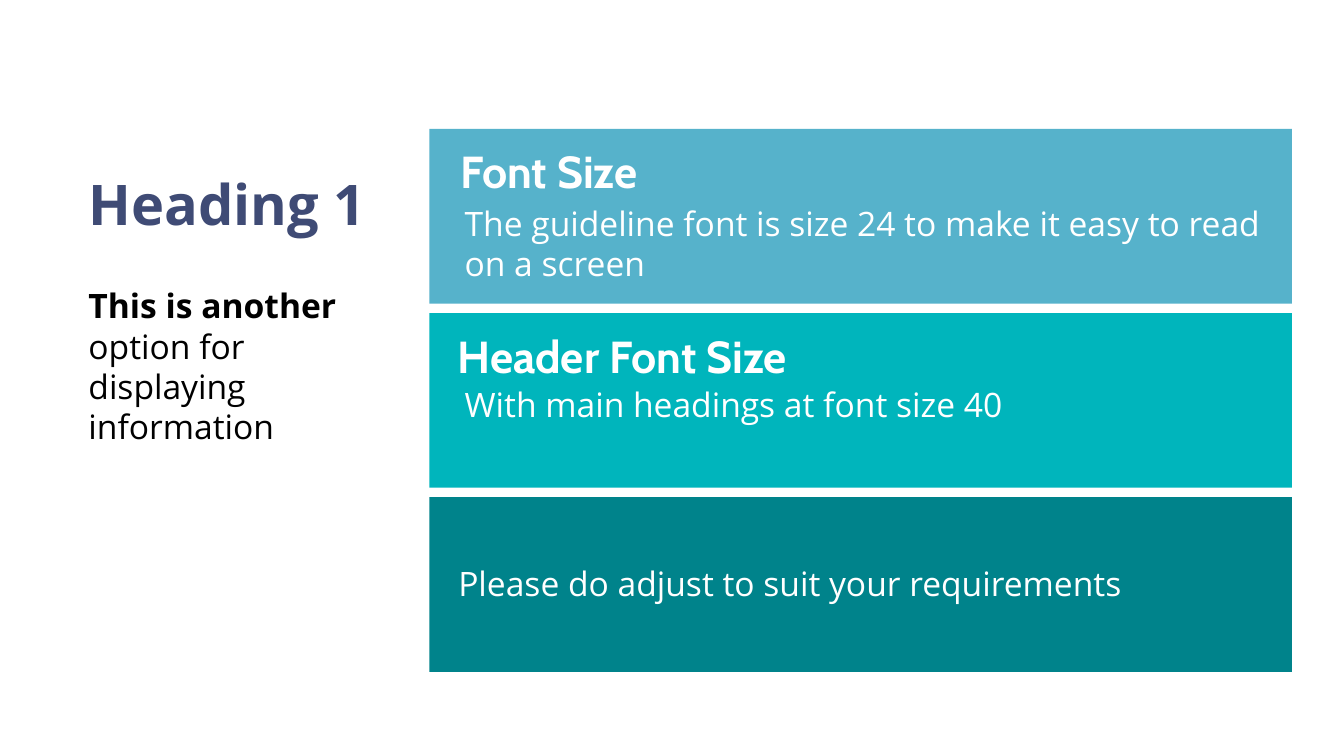
from pptx import Presentation
from pptx.dml.color import RGBColor as RGB
from pptx.enum.shapes import MSO_SHAPE as SHAPE
from pptx.enum.text import MSO_AUTO_SIZE as FIT
from pptx.util import Cm, Pt

COLORS = {
    "sky": "56B2CB",
    "turquoise": "00B5BC",
    "teal": "00838B",
    "navy": "3F4B75",
    "black": "000000",
    "white": "FFFFFF",
}


class Deck:
    formats = {
        "heading": {"name": "Open Sans", "size": Pt(40), "bold": True},
        "title": {"name": "Cabin", "size": Pt(32), "bold": True},
        "body": {"name": "Open Sans", "size": Pt(24), "bold": False},
        "strong": {"name": "Open Sans", "size": Pt(24), "bold": True},
    }

    def __init__(self):
        self.prs = Presentation()
        self.prs.slide_width = Cm(33.87)
        self.prs.slide_height = Cm(19.05)
        self.s = self.prs.slides.add_slide(self.prs.slide_layouts[6])

    def panel(self, x, y, w, h, color):
        sp = self.s.shapes.add_shape(SHAPE.RECTANGLE, Cm(x), Cm(y), Cm(w), Cm(h))
        sp.shadow.inherit = False
        sp.fill.solid()
        sp.fill.fore_color.rgb = RGB.from_string(COLORS[color])
        sp.line.fill.background()

    def text(self, x, y, w, h, color, *runs):
        sp = self.s.shapes.add_textbox(Cm(x), Cm(y), Cm(w), Cm(h))
        tf = sp.text_frame
        tf.word_wrap = True
        tf.auto_size = FIT.SHAPE_TO_FIT_TEXT
        p = tf.paragraphs[0]
        for style, words in runs:
            r = p.add_run()
            r.text = words
            for key, value in self.formats[style].items():
                setattr(r.font, key, value)
            r.font.color.rgb = RGB.from_string(COLORS[color])


def main():
    deck = Deck()
    for i, color in enumerate(("sky", "turquoise", "teal")):
        deck.panel(10.82, 3.25 + i * 4.64, 21.74, 4.4, color)

    deck.text(1.98, 4.14, 7.77, 1.96, "navy", ("heading", "Heading 1"))
    deck.text(1.98, 7.06, 7.16, 4.37, "black",
              ("strong", "This is another "),
              ("body", "option for displaying information"))

    for x, y, w, h, style, words in (
        (11.35, 3.5, 6.5, 1.63, "title", "Font Size"),
        (11.46, 4.98, 20.78, 2.31, "body",
         "The guideline font is size 24 to make it easy to read on a screen"),
        (11.28, 8.15, 11.53, 1.63, "title", "Header Font Size"),
        (11.46, 9.55, 20.78, 1.27, "body", "With main headings at font size 40"),
        (11.3, 14.07, 20.78, 1.27, "body",
         "Please do adjust to suit your requirements"),
    ):
        deck.text(x, y, w, h, "white", (style, words))

    deck.prs.save("out.pptx")


if __name__ == "__main__":
    main()
